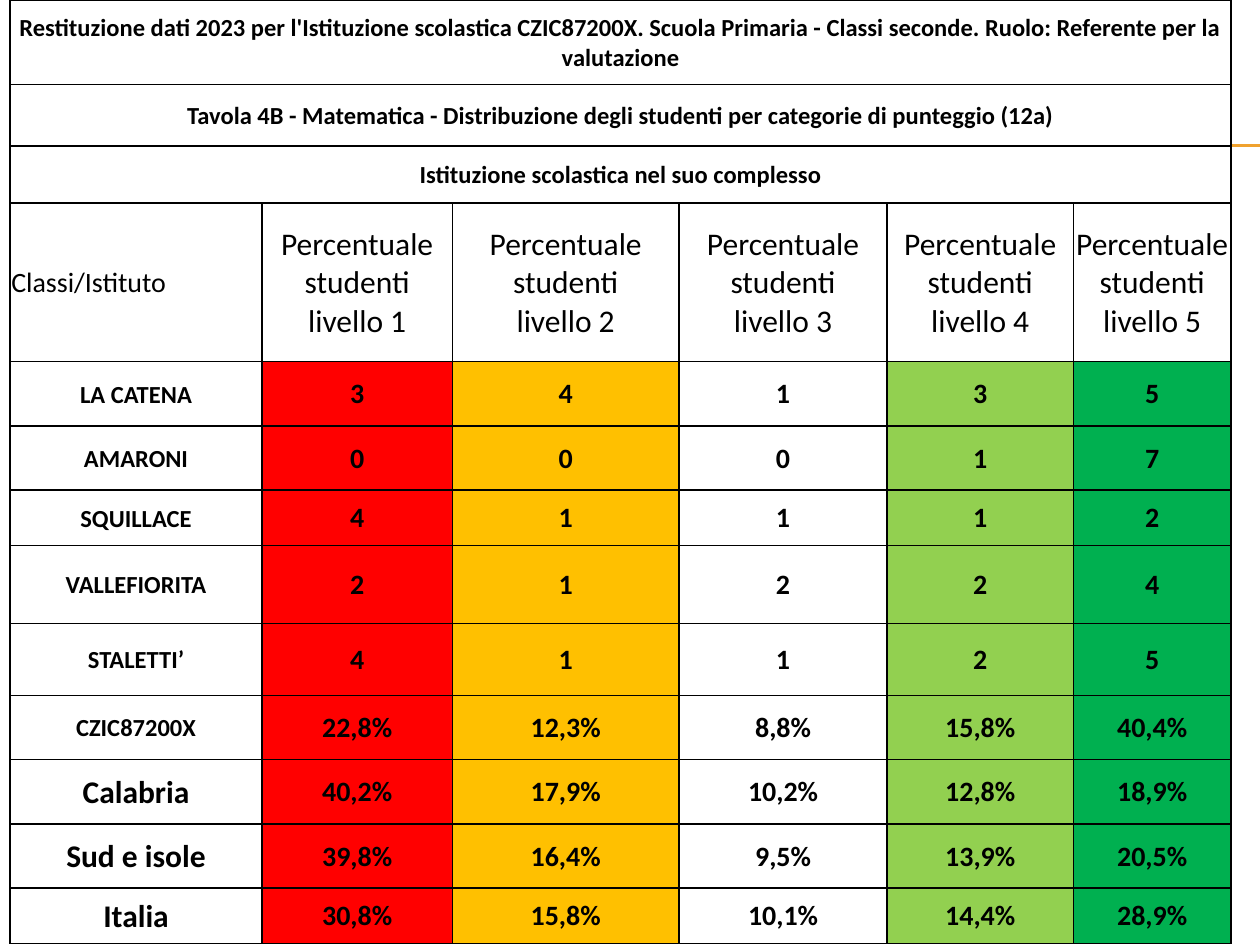
from lxml import etree
from pptx import Presentation, util as u
from pptx.dml import color
from pptx.enum import shapes, text
from pptx.oxml import ns

# Content
TITLES = [
    "Restituzione dati 2023 per l'Istituzione scolastica CZIC87200X. "
    "Scuola Primaria - Classi seconde. Ruolo: Referente per la valutazione",
    "Tavola 4B - Matematica - Distribuzione degli studenti per categorie di punteggio (12a)",
    "Istituzione scolastica nel suo complesso",
]
CORNER = "Classi/Istituto"
LEVELS = [("Percentuale studenti", f"livello {n}") for n in range(1, 6)]
SCHOOLS = [
    ("LA CATENA", "3", "4", "1", "3", "5"),
    ("AMARONI", "0", "0", "0", "1", "7"),
    ("SQUILLACE", "4", "1", "1", "1", "2"),
    ("VALLEFIORITA", "2", "1", "2", "2", "4"),
    ("STALETTI’", "4", "1", "1", "2", "5"),
    ("CZIC87200X", "22,8%", "12,3%", "8,8%", "15,8%", "40,4%"),
]
AREAS = [
    ("Calabria", "40,2%", "17,9%", "10,2%", "12,8%", "18,9%"),
    ("Sud e isole", "39,8%", "16,4%", "9,5%", "13,9%", "20,5%"),
    ("Italia", "30,8%", "15,8%", "10,1%", "14,4%", "28,9%"),
]

# Theme and grid, in points and inches
THEME = {
    "font": "Calibri", "ink": "000000", "paper": "FFFFFF", "rule": "F0A22E",
    "levels": ["FF0000", "FFC000", "FFFFFF", "92D050", "00B050"],
    "small": 14, "medium": 16, "large": 18, "border": 1, "rule_width": 0.75,
}
WIDTH, HEIGHT = 10, 7.5
TABLE_LEFT = 0.08
COLUMNS = [2, 1.51, 1.8, 1.65, 1.48, 1.25]
ROWS = [0.67, 0.49, 0.45, 1.26, 0.51, 0.51, 0.44, 0.62, 0.57, 0.51, 0.51, 0.51, 0.44]
RULE_LEFT, RULE_TOPS = 0.56, (1.15, 1.16)
TIGHT, SCHOOL_INSETS = (0.01, 0.01, 0.01, 0), (0.06, 0, 0.06, 0)


def rgb(key):
    return color.RGBColor.from_string(THEME.get(key, key))


def add_rule(slide, top):
    rule = slide.shapes.add_connector(
        shapes.MSO_CONNECTOR.STRAIGHT, u.Inches(RULE_LEFT), u.Inches(top),
        u.Inches(WIDTH), u.Inches(top))
    rule.line.color.rgb = rgb("rule")
    rule.line.width = u.Pt(THEME["rule_width"])
    etree.SubElement(rule._element.spPr, ns.qn("a:effectLst"))


def add_borders(cell):
    properties = cell._tc.get_or_add_tcPr()
    for place, side in enumerate(("a:lnL", "a:lnR", "a:lnT", "a:lnB")):
        border = etree.Element(ns.qn(side), w=str(u.Pt(THEME["border"])))
        fill = etree.SubElement(border, ns.qn("a:solidFill"))
        etree.SubElement(fill, ns.qn("a:srgbClr"), val=THEME["ink"])
        properties.insert(place, border)


def fill_cell(cell, lines, size, bold=True, fill="paper", insets=TIGHT,
              align=text.PP_ALIGN.CENTER, spacing=None):
    cell.fill.solid()
    cell.fill.fore_color.rgb = rgb(fill)
    cell.vertical_anchor = text.MSO_ANCHOR.MIDDLE
    (cell.margin_left, cell.margin_top,
     cell.margin_right, cell.margin_bottom) = map(u.Inches, insets)
    paragraph = cell.text_frame.paragraphs[0]
    paragraph.alignment = align
    if spacing:
        paragraph.line_spacing = spacing
    for number, line in enumerate(lines):
        if number:
            paragraph.add_line_break()
        run = paragraph.add_run()
        run.text = line
        run.font.name, run.font.size = THEME["font"], u.Pt(THEME[size])
        run.font.bold, run.font.color.rgb = bold, rgb("ink")


def main():
    deck = Presentation()
    deck.slide_width, deck.slide_height = u.Inches(WIDTH), u.Inches(HEIGHT)
    slide = deck.slides.add_slide(deck.slide_layouts[6])

    # Double rule behind the table
    for top in RULE_TOPS:
        add_rule(slide, top)

    # Table grid
    results = slide.shapes.add_table(
        len(ROWS), len(COLUMNS), u.Inches(TABLE_LEFT), 0,
        u.Inches(sum(COLUMNS)), u.Inches(sum(ROWS))).table
    results.first_row = results.horz_banding = False
    for column, width in zip(results.columns, COLUMNS):
        column.width = u.Inches(width)
    for row, height in zip(results.rows, ROWS):
        row.height = u.Inches(height)

    # Full-width titles
    for row, title in enumerate(TITLES):
        results.cell(row, 0).merge(results.cell(row, len(COLUMNS) - 1))
        fill_cell(results.cell(row, 0), [title], "small")

    # Column headings
    heading_row = len(TITLES)
    fill_cell(results.cell(heading_row, 0), [CORNER], "medium", bold=False,
              align=text.PP_ALIGN.LEFT)
    for column, level in enumerate(LEVELS, 1):
        fill_cell(results.cell(heading_row, column), level, "large", bold=False)

    # Schools, then comparison areas
    for row, (place, *shares) in enumerate(SCHOOLS + AREAS, heading_row + 1):
        if row <= heading_row + len(SCHOOLS):
            fill_cell(results.cell(row, 0), [place], "small",
                      insets=SCHOOL_INSETS, spacing=1.07)
        else:
            fill_cell(results.cell(row, 0), [place], "large")
        for column, (share, fill) in enumerate(zip(shares, THEME["levels"]), 1):
            fill_cell(results.cell(row, column), [share], "medium", fill=fill)

    for cell in results.iter_cells():
        add_borders(cell)
    deck.save("out.pptx")


if __name__ == "__main__":
    main()
